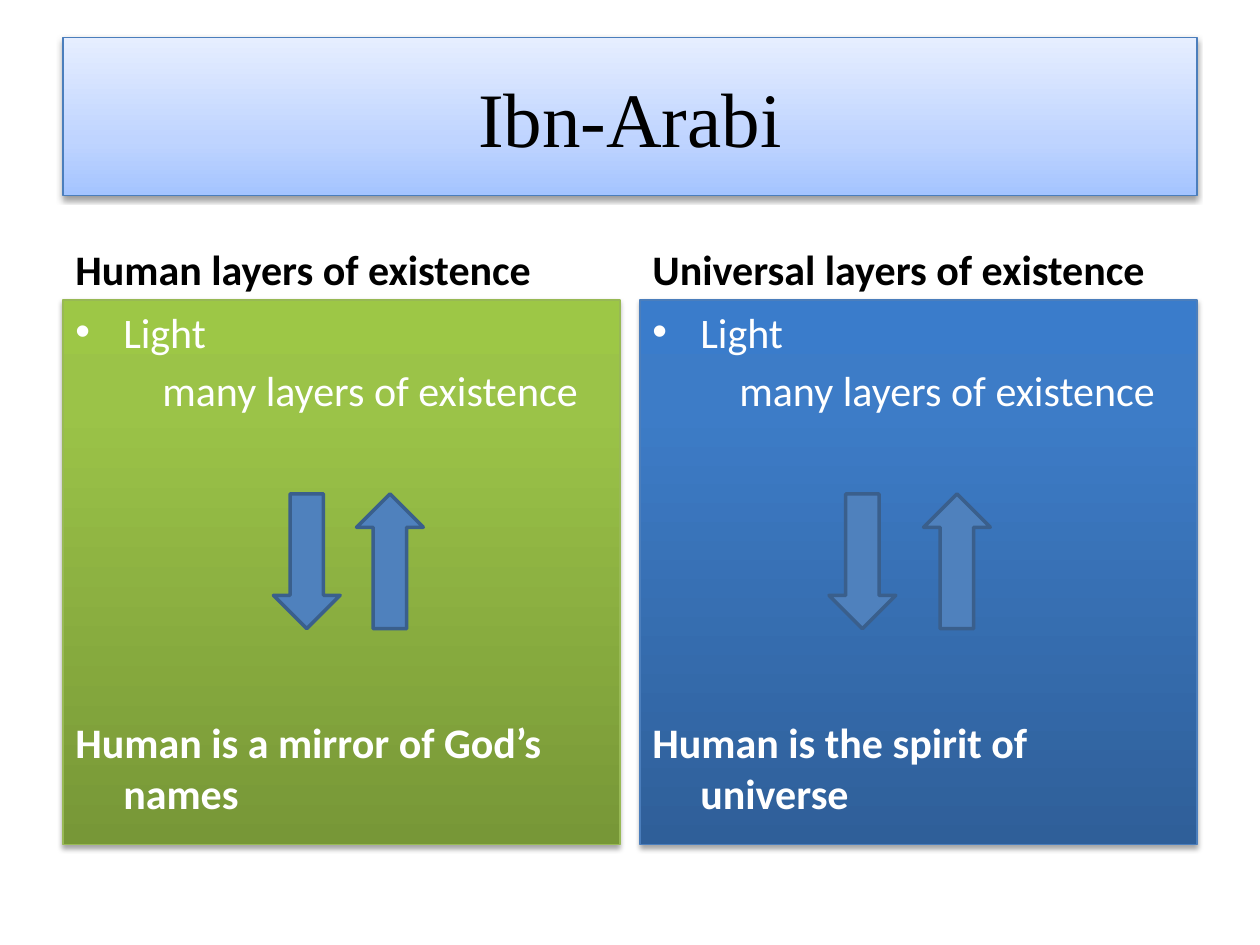
from copy import deepcopy

from lxml.etree import SubElement
from pptx import Presentation
from pptx.dml.color import RGBColor
from pptx.enum.shapes import MSO_SHAPE
from pptx.enum.text import MSO_ANCHOR, PP_ALIGN
from pptx.oxml.ns import qn
from pptx.util import Inches, Pt

BLACK = RGBColor(0x00, 0x00, 0x00)
WHITE = RGBColor(0xFF, 0xFF, 0xFF)
BLUE_LINE = RGBColor(0x4B, 0x7E, 0xBC)
GREEN_LINE = RGBColor(0x98, 0xB9, 0x55)
ARROW_FILL = RGBColor(0x4F, 0x81, 0xBD)
ARROW_LINE = RGBColor(0x3A, 0x5F, 0x8C)
TITLE_STOPS = [
    (0, RGBColor(0xA4, 0xC4, 0xFF)),
    (0.35, RGBColor(0xBF, 0xD4, 0xFF)),
    (1, RGBColor(0xE6, 0xEE, 0xFF)),
]
GREEN_STOPS = [
    (0, RGBColor(0x77, 0x97, 0x37)),
    (0.8, RGBColor(0x9B, 0xC3, 0x48)),
    (1, RGBColor(0x9D, 0xC7, 0x46)),
]
BLUE_STOPS = [
    (0, RGBColor(0x2F, 0x5F, 0x99)),
    (0.8, RGBColor(0x3D, 0x7C, 0xC7)),
    (1, RGBColor(0x3A, 0x7C, 0xCB)),
]
COLUMN_WIDTH = 4.42
COLUMNS = [
    (0.5, "Human layers of existence", "Human is a mirror of God’s names",
     GREEN_STOPS, GREEN_LINE, 2.17, 2.83),
    (5.08, "Universal layers of existence", "Human is the spirit of universe",
     BLUE_STOPS, BLUE_LINE, 6.58, 7.33),
]


def add_shape(slide, kind, left, top, width, height, line_color, line_width):
    """Add a preset shape with an outline and no inherited shadow."""
    shape = slide.shapes.add_shape(
        kind, Inches(left), Inches(top), Inches(width), Inches(height))
    shape.shadow.inherit = False
    shape.line.color.rgb = line_color
    shape.line.width = Pt(line_width)
    return shape


def add_shadow(shape, distance, opacity):
    """Give a shape a soft black shadow that falls downwards."""
    effects = shape._element.spPr.find(qn("a:effectLst"))
    shadow = SubElement(
        effects, qn("a:outerShdw"), blurRad=str(Pt(3.1)),
        dist=str(Pt(distance)), dir="5400000", rotWithShape="0")
    color = SubElement(shadow, qn("a:srgbClr"), val=str(BLACK))
    SubElement(color, qn("a:alpha"), val=str(opacity * 1000))


def add_panel(slide, left, top, width, height, stops, line_color, distance, opacity):
    """Add a rectangle with a three-stop gradient rising from its base."""
    panel = add_shape(slide, MSO_SHAPE.RECTANGLE, left, top, width, height,
                      line_color, 0.75)
    panel.fill.gradient()
    panel.fill.gradient_angle = 90
    stop_list = panel._element.spPr.find(qn("a:gradFill")).find(qn("a:gsLst"))
    stop_list.append(deepcopy(stop_list[0]))
    for stop, (position, color) in zip(panel.fill.gradient_stops, stops):
        stop.position = position
        stop.color.rgb = color
    add_shadow(panel, distance, opacity)
    panel.text_frame.word_wrap = True
    return panel


def write_run(paragraph, text, color, size=24, bold=False, font_name="Calibri"):
    """Add one formatted run to a paragraph."""
    run = paragraph.add_run()
    run.text = text
    run.font.name = font_name
    run.font.size = Pt(size)
    run.font.bold = bold
    run.font.color.rgb = color


def set_paragraph(paragraph, space_before, margin, indent, bullet=False):
    """Left-align a paragraph with the given spacing, indent and bullet."""
    paragraph.alignment = PP_ALIGN.LEFT
    paragraph.space_before = Pt(space_before)
    properties = paragraph._p.get_or_add_pPr()
    properties.set("marL", str(Inches(margin)))
    properties.set("indent", str(Inches(indent)))
    if bullet:
        SubElement(properties, qn("a:buFont"), typeface="Arial")
        SubElement(properties, qn("a:buChar"), char="•")


def add_title(slide):
    """Add the title banner."""
    banner = add_panel(slide, 0.5, 0.3, 9, 1.25, TITLE_STOPS, BLUE_LINE, 1.6, 38)
    banner.text_frame.vertical_anchor = MSO_ANCHOR.MIDDLE
    paragraph = banner.text_frame.paragraphs[0]
    paragraph.alignment = PP_ALIGN.CENTER
    write_run(paragraph, "Ibn-Arabi", BLACK, 44, font_name="Times New Roman")


def add_heading(slide, left, text):
    """Add the bold heading above a column."""
    box = slide.shapes.add_textbox(
        Inches(left), Inches(1.68), Inches(COLUMN_WIDTH), Inches(0.7))
    box.text_frame.word_wrap = True
    box.text_frame.vertical_anchor = MSO_ANCHOR.BOTTOM
    write_run(box.text_frame.paragraphs[0], text, BLACK, bold=True)


def add_column_panel(slide, left, conclusion, stops, line_color):
    """Add a column panel with its layers and its conclusion."""
    panel = add_panel(slide, left, 2.38, COLUMN_WIDTH, 4.32, stops, line_color, 1.8, 35)
    frame = panel.text_frame
    frame.vertical_anchor = MSO_ANCHOR.TOP
    lines = [
        ("Light", False, 4.8, 0.38, -0.38, True),
        ("many layers of existence", False, 4.8, 0.38, 0.31, False),
        (conclusion, True, 172.4, 0.38, -0.38, False),
    ]
    for index, (text, bold, space, margin, indent, bullet) in enumerate(lines):
        paragraph = frame.add_paragraph() if index else frame.paragraphs[0]
        set_paragraph(paragraph, space, margin, indent, bullet)
        write_run(paragraph, text, WHITE, bold=bold)


def add_arrow(slide, kind, left):
    """Add a vertical block arrow."""
    arrow = add_shape(slide, kind, left, 3.92, 0.53, 1.07, ARROW_LINE, 2)
    arrow.fill.solid()
    arrow.fill.fore_color.rgb = ARROW_FILL


def main():
    """Build the slide and save it."""
    presentation = Presentation()
    presentation.slide_width = Inches(10)
    presentation.slide_height = Inches(7.5)
    slide = presentation.slides.add_slide(presentation.slide_layouts[6])
    add_title(slide)
    for left, heading, conclusion, stops, line_color, down_left, up_left in COLUMNS:
        add_heading(slide, left, heading)
        add_column_panel(slide, left, conclusion, stops, line_color)
        add_arrow(slide, MSO_SHAPE.DOWN_ARROW, down_left)
        add_arrow(slide, MSO_SHAPE.UP_ARROW, up_left)
    presentation.save("out.pptx")


if __name__ == "__main__":
    main()
